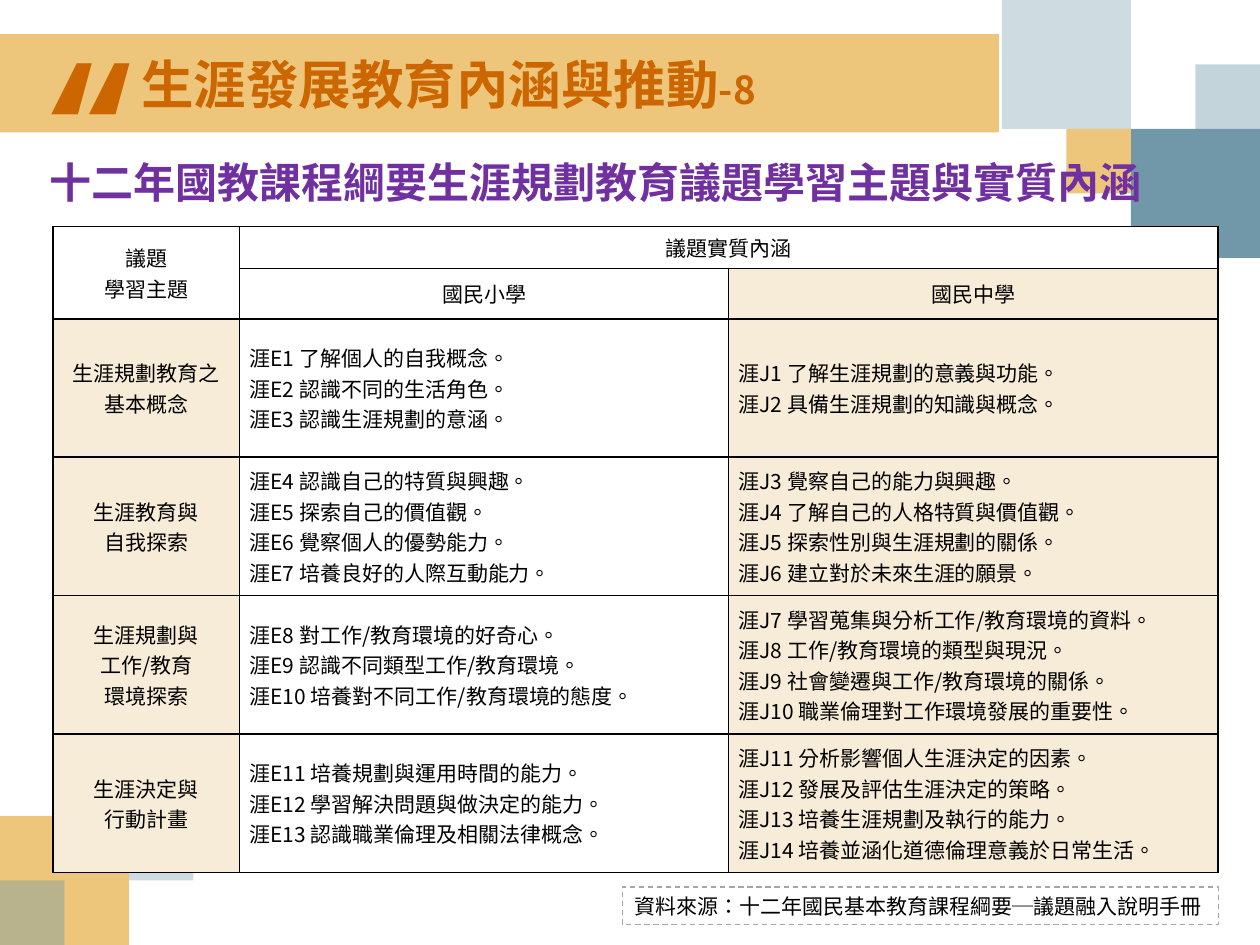
from itertools import count

from lxml.etree import SubElement as Sub
from pptx import Presentation
from pptx.dml.color import RGBColor as Rgb
from pptx.enum.dml import MSO_LINE as Dash
from pptx.enum.shapes import MSO_SHAPE as Kind
from pptx.enum.text import MSO_ANCHOR as Anchor, PP_ALIGN as Align
from pptx.oxml.ns import qn
from pptx.util import Cm, Pt

TITLE = "生涯發展教育內涵與推動"
PAGE = "-8"
TOPIC = "十二年國教課程綱要生涯規劃教育議題學習主題與實質內涵"
CITE = "資料來源：十二年國民基本教育課程綱要─議題融入說明手冊"
HEAD = ["議題\n學習主題", "議題實質內涵", "國民小學", "國民中學"]
ROWS = [
    ("生涯規劃教育之基本概念",
     ["了解個人的自我概念。", "認識不同的生活角色。", "認識生涯規劃的意涵。"],
     ["了解生涯規劃的意義與功能。", "具備生涯規劃的知識與概念。"]),
    ("生涯教育與\n自我探索",
     ["認識自己的特質與興趣。", "探索自己的價值觀。",
      "覺察個人的優勢能力。", "培養良好的人際互動能力。"],
     ["覺察自己的能力與興趣。", "了解自己的人格特質與價值觀。",
      "探索性別與生涯規劃的關係。", "建立對於未來生涯的願景。"]),
    ("生涯規劃與\n工作/教育\n環境探索",
     ["對工作/教育環境的好奇心。", "認識不同類型工作/教育環境。",
      "培養對不同工作/教育環境的態度。"],
     ["學習蒐集與分析工作/教育環境的資料。", "工作/教育環境的類型與現況。",
      "社會變遷與工作/教育環境的關係。", "職業倫理對工作環境發展的重要性。"]),
    ("生涯決定與\n行動計畫",
     ["培養規劃與運用時間的能力。", "學習解決問題與做決定的能力。",
      "認識職業倫理及相關法律概念。"],
     ["分析影響個人生涯決定的因素。", "發展及評估生涯決定的策略。",
      "培養生涯規劃及執行的能力。", "培養並涵化道德倫理意義於日常生活。"]),
]

THEME = {
    "font": "Noto Sans CJK SC", "mark": "Courier New",
    "ink": "000000", "white": "FFFFFF", "cream": "F7ECD7", "gold": "EDC67B",
    "pale": "CEDBE0", "teal": "7198A9", "rust": "CC6600", "plum": "7030A0",
    "gray": "A6A6A6",
    "body": 12, "topic": 24, "title": 30, "page": 22, "quote": 96,
}

WIDE, HIGH, UNIT = 25.4, 19.05, 1.3
# column, row, units, colour, opacity; negative counts from the far edge
TILES = [
    (-4, 0, 2, "pale", 100), (-2, 2, 2, "teal", 100),
    (0, -2, 2, "gold", 100), (2, -2, 1, "pale", 100),
    (0, -1, 1, "teal", 41), (-3, 2, 1, "gold", 100), (-1, 1, 1, "teal", 41),
]
BAND = (0, 0.69, 20.14, 1.98)
COLS = [3.76, 9.86, 9.86]
TALL = [0.84, 1.01] + [2.79] * 4


def color(key):
    return Rgb.from_string(THEME[key])


def write(frame, text, size="body", ink="ink", font="font", bold=False,
          align=Align.LEFT, anchor=Anchor.MIDDLE, pad=None, lead=None, more=()):
    frame.word_wrap = True
    frame.vertical_anchor = anchor
    if pad:
        frame.margin_left = frame.margin_right = Cm(pad[0])
        frame.margin_top = frame.margin_bottom = Cm(pad[1])
    for n, line in enumerate(text.split("\n")):
        para = frame.add_paragraph() if n else frame.paragraphs[0]
        para.alignment = align
        if lead:
            para.line_spacing = lead
        for part, step in [(line, size), *more]:
            run = para.add_run()
            run.text = part
            run.font.size = Pt(THEME[step])
            run.font.bold = bold
            run.font.name = THEME[font]
            run.font.color.rgb = color(ink)
            prop = run.font._element
            prop.set("lang", "zh-TW")
            Sub(prop, qn("a:ea")).set("typeface", THEME[font])


def block(slide, area, fill, alpha=100):
    rect = slide.shapes.add_shape(Kind.RECTANGLE, *map(Cm, area))
    rect.shadow.inherit = False
    rect.fill.solid()
    rect.fill.fore_color.rgb = color(fill)
    rect.line.fill.background()
    if alpha < 100:
        tint = rect._element.spPr.find(".//" + qn("a:srgbClr"))
        Sub(tint, qn("a:alpha")).set("val", str(alpha * 1000))


def label(slide, area, text, **form):
    box = slide.shapes.add_textbox(*map(Cm, area))
    write(box.text_frame, text, **form)
    return box


def paint(cell, fill):
    prop = cell._tc.get_or_add_tcPr()
    for side in "LRTB":
        line = Sub(prop, qn("a:ln" + side), w=str(Pt(1)))
        Sub(Sub(line, qn("a:solidFill")), qn("a:srgbClr"), val=THEME["ink"])
    cell.fill.solid()
    cell.fill.fore_color.rgb = color(fill)


def grid(slide):
    area = (1.07, 4.57, sum(COLS), sum(TALL))
    table = slide.shapes.add_table(len(TALL), len(COLS), *map(Cm, area)).table
    table.first_row = table.horz_banding = False
    for col, width in zip(table.columns, COLS):
        col.width = Cm(width)
    for row, height in zip(table.rows, TALL):
        row.height = Cm(height)
    table.cell(0, 0).merge(table.cell(1, 0))
    table.cell(0, 1).merge(table.cell(0, 2))

    text = {(0, 0): HEAD[0], (0, 1): HEAD[1], (1, 1): HEAD[2], (1, 2): HEAD[3]}
    nums = {"E": count(1), "J": count(1)}
    for r, (theme, *lists) in enumerate(ROWS, 2):
        text[r, 0] = theme
        for c, (key, items) in enumerate(zip("EJ", lists), 1):
            text[r, c] = "\n".join(f"涯{key}{next(nums[key])} {item}" for item in items)

    for r in range(len(TALL)):
        for c in range(len(COLS)):
            cell = table.cell(r, c)
            cream = (c == 0 and r > 1) or (c == 2 and r > 0)
            paint(cell, "cream" if cream else "white")
            cell.margin_left = cell.margin_right = Cm(0.2)
            cell.margin_top = cell.margin_bottom = 0
            cell.vertical_anchor = Anchor.MIDDLE
            if (r, c) in text:
                mid = r < 2 or c == 0
                write(cell.text_frame, text[r, c], pad=(0.2, 0),
                      align=Align.CENTER if mid else Align.LEFT)


def main():
    deck = Presentation()
    deck.slide_width, deck.slide_height = Cm(WIDE), Cm(HIGH)
    slide = deck.slides.add_slide(deck.slide_layouts[5])

    for x, y, n, fill, alpha in TILES:
        left = x * UNIT + (WIDE if x < 0 else 0)
        top = y * UNIT + (HIGH if y < 0 else 0)
        block(slide, (left, top, n * UNIT, n * UNIT), fill, alpha)
    block(slide, BAND, "gold")
    label(slide, (0.56, 0.23, 2.84, 4.37), "“", size="quote", ink="rust",
          font="mark", bold=True, anchor=Anchor.TOP)

    title = slide.shapes.title
    title.left, title.top, title.width, title.height = map(Cm, (2.6, 0.69, 17.53, 1.98))
    write(title.text_frame, TITLE, size="title", ink="rust", bold=True,
          pad=(0.25, 0.25), more=[(PAGE, "page")])
    slide.shapes._spTree.append(title._element)

    cite = label(slide, (12.55, 17.88, 12.01, 0.76), CITE, anchor=Anchor.TOP)
    cite.line.color.rgb = color("gray")
    cite.line.width = Pt(0.75)
    cite.line.dash_style = Dash.DASH
    label(slide, (0.81, 3.18, 22.78, 1.09), TOPIC, size="topic", ink="plum",
          bold=True, pad=(0.18, 0.1), lead=0.9)
    grid(slide)
    deck.save("out.pptx")


if __name__ == "__main__":
    main()
